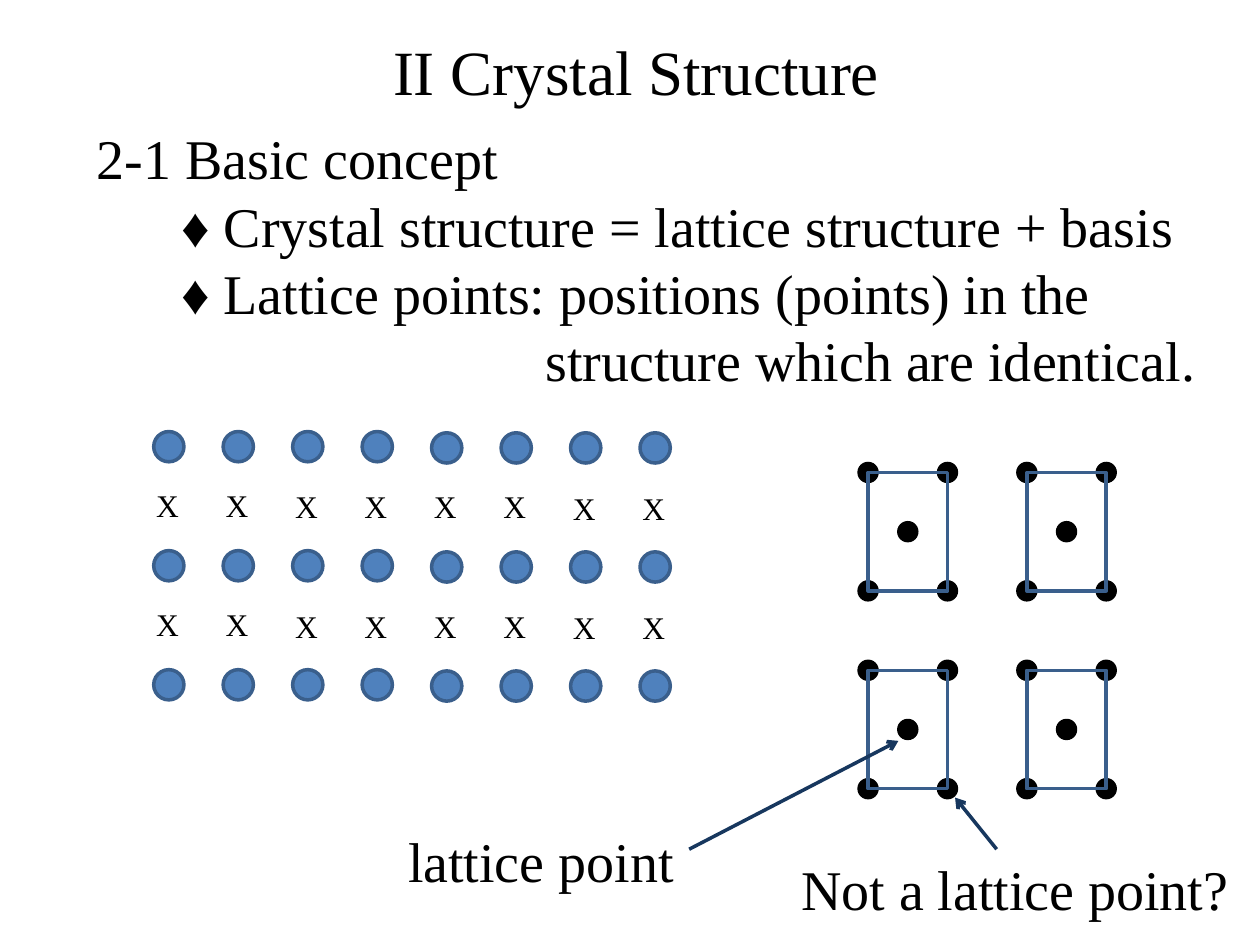
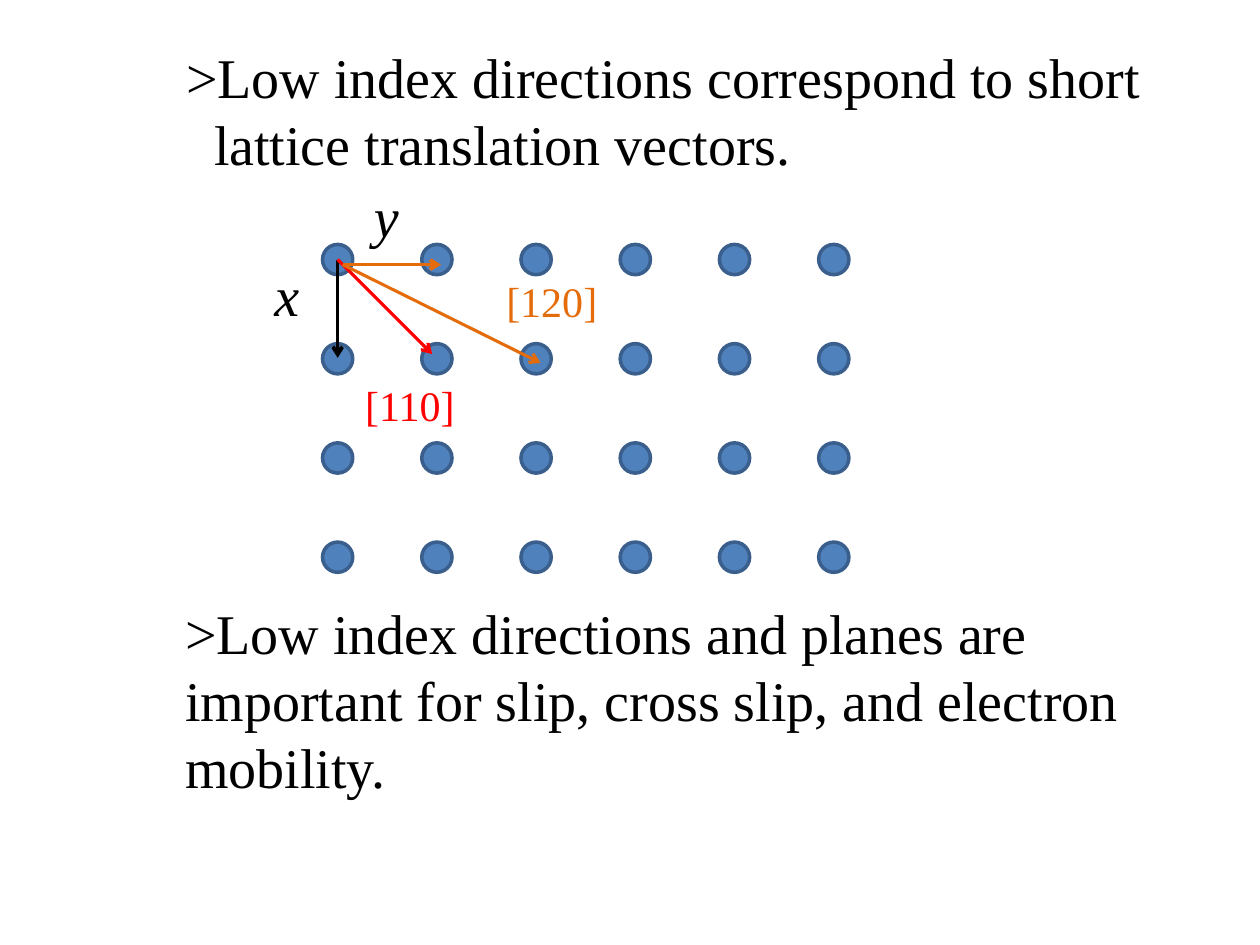
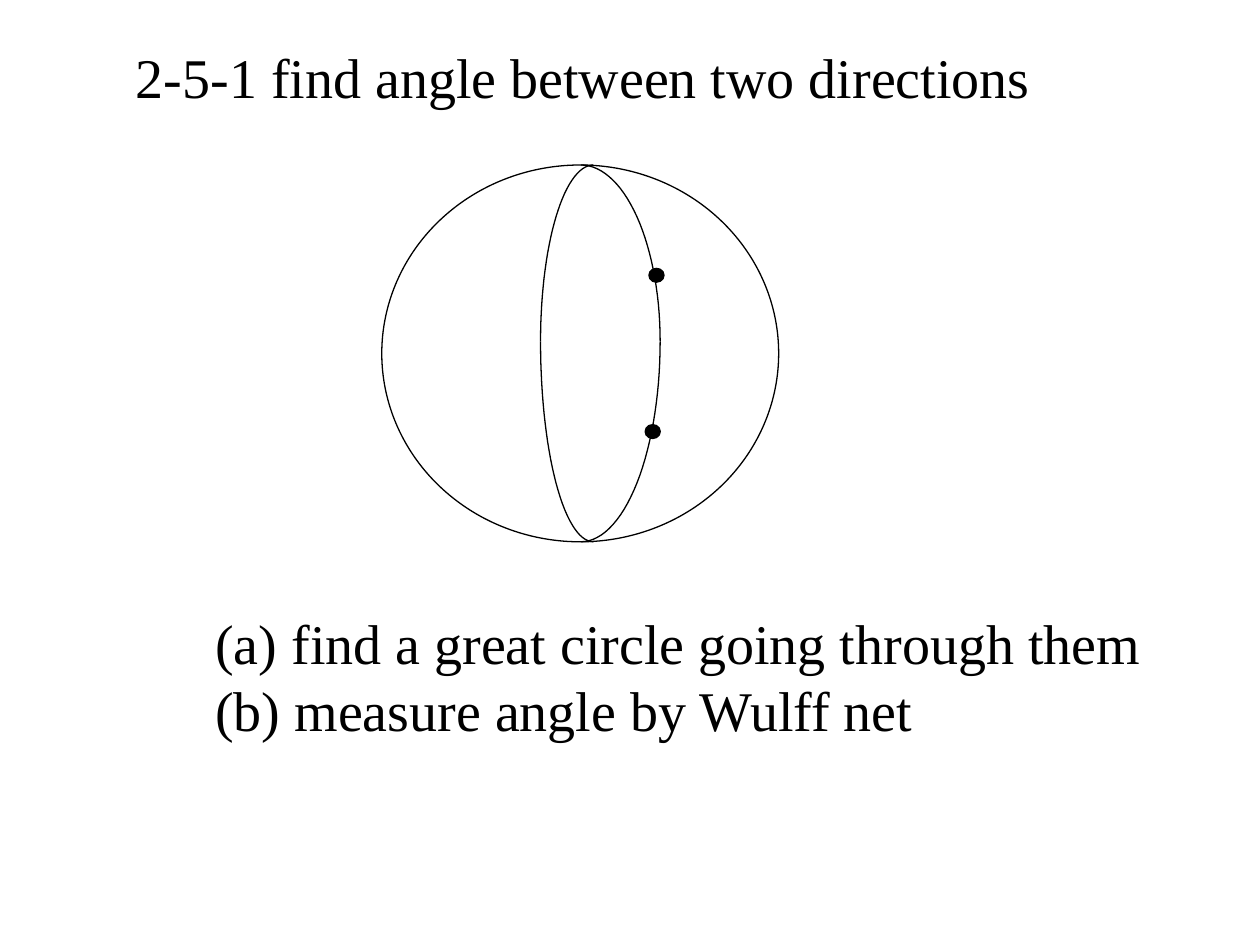
from itertools import product
from math import cos, pi, sin

from lxml.etree import SubElement
from pptx import Presentation
from pptx.dml.color import RGBColor
from pptx.enum.shapes import MSO_CONNECTOR, MSO_SHAPE
from pptx.enum.text import MSO_ANCHOR, MSO_AUTO_SIZE, PP_ALIGN
from pptx.oxml.ns import qn
from pptx.util import Inches, Pt

FONT = "Times New Roman"
COLORS = {
    "black": "000000", "white": "FFFFFF", "atom": "4F81BD", "edge": "3A5F8C",
    "navy": "17375E", "red": "FF0000", "orange": "E46C0A",
}
ATOM, DOT = 0.24, 0.16

# Text boxes: (box, lines, options); a line is a string or (string, indent in inches)
CRYSTAL_TEXTS = [
    ((0.67, 0.92, 9.21, 2.26),
     ["2-1 Basic concept",
      ("♦ Crystal structure = lattice structure + basis", 0.67),
      ("♦ Lattice points: positions (points) in the", 0.67),
      ("structure which are identical.", 3.56)],
     {"wrap": True, "middle": True}),
    ((0.53, 0.21, 9.04, 0.71), ["II Crystal Structure"],
     {"size": 36, "wrap": True, "align": PP_ALIGN.CENTER}),
    ((6.26, 6.73, 3.63, 0.64), ["Not a lattice point?"], {}),
    ((3.14, 6.51, 2.33, 0.64), ["lattice point"], {}),
]
DIRECTION_TEXTS = [
    ((1.37, 4.69, 7.68, 1.72),
     [">Low index directions and planes are",
      "important for slip, cross slip, and electron",
      "mobility."],
     {"middle": True}),
    ((1.38, 0.29, 7.85, 1.18),
     [">Low index directions correspond to short",
      ("lattice translation vectors.", 0.22)], {}),
]
VECTOR_LABELS = [
    ((2.08, 2.02, 0.4, 0.64), ["x"], {"italic": True}),
    ((2.87, 1.39, 0.4, 0.64), ["y"], {"italic": True}),
    ((2.8, 2.96, 0.92, 0.5), ["[110]"], {"size": 24, "color": "red"}),
    ((3.92, 2.14, 0.93, 0.5), ["[120]"], {"size": 24, "color": "orange"}),
]
ANGLE_TEXTS = [
    ((0.98, 0.29, 7.37, 0.64), ["2-5-1 find angle between two directions"], {}),
    ((1.61, 4.78, 7.87, 1.18),
     ["(a) find a great circle going through them",
      "(b) measure angle by Wulff net"], {"wrap": True}),
]

# Arrows: (start, end, colour, width)
POINTERS = [
    ((7.91, 6.74), (7.58, 6.33), "navy", 2),
    ((5.47, 6.74), (7.13, 5.88), "navy", 2),
]
VECTORS = [
    ((2.68, 2.06), (2.68, 2.84), "black", 2),
    ((2.72, 2.1), (3.5, 2.1), "orange", 2),
    ((2.68, 2.06), (3.43, 2.81), "red", 1.75),
    ((2.72, 2.1), (4.29, 2.88), "orange", 1.75),
]

# Unit cells, and the great circle as quarter arcs
CELL_LEFTS, CELL_TOPS, CELL_SIZE = (6.89, 8.15), (3.75, 5.32), (0.63, 0.94)
SPHERE = (3.03, 1.31, 3.15, 2.99)
EQUATOR = 2.71
ARC_SIDES = [(4.61, 0.63), (4.71, -0.42)]
ARC_HEIGHTS = [-1.4, 1.59]
DIRECTION_POINTS = [(5.15, 2.13), (5.12, 3.37)]


def rgb(name):
    return RGBColor.from_string(COLORS[name])


def add_text(slide, box, lines, size=32, color="black", italic=False,
             wrap=False, middle=False, align=PP_ALIGN.LEFT):
    frame = slide.shapes.add_textbox(*map(Inches, box)).text_frame
    frame.word_wrap = wrap
    frame.auto_size = MSO_AUTO_SIZE.SHAPE_TO_FIT_TEXT
    frame.vertical_anchor = MSO_ANCHOR.MIDDLE if middle else MSO_ANCHOR.TOP
    for number, line in enumerate(lines):
        wording, indent = line if isinstance(line, tuple) else (line, 0)
        paragraph = frame.add_paragraph() if number else frame.paragraphs[0]
        paragraph.text = wording
        paragraph.alignment = align
        if indent:
            paragraph._p.get_or_add_pPr().set("marL", str(Inches(indent)))
        font = paragraph.runs[0].font
        font.name, font.size, font.italic = FONT, Pt(size), italic
        font.color.rgb = rgb(color)


def add_texts(slide, texts):
    for box, lines, options in texts:
        add_text(slide, box, lines, **options)


def style(shape, fill, line, width):
    shape.shadow.inherit = False
    if fill:
        shape.fill.solid()
        shape.fill.fore_color.rgb = rgb(fill)
    else:
        shape.fill.background()
    shape.line.color.rgb = rgb(line)
    shape.line.width = Pt(width)


def add_figure(slide, box, fill, line="black", width=0.75, kind=MSO_SHAPE.OVAL):
    style(slide.shapes.add_shape(kind, *map(Inches, box)), fill, line, width)


def add_atom(slide, left, top):
    add_figure(slide, (left, top, ATOM, ATOM), "atom", "edge", 2)


def add_arrow(slide, start, end, color, width):
    arrow = slide.shapes.add_connector(
        MSO_CONNECTOR.STRAIGHT, *map(Inches, start + end))
    arrow.line.color.rgb = rgb(color)
    arrow.line.width = Pt(width)
    SubElement(arrow.line._get_or_add_ln(), qn("a:tailEnd"), type="arrow")
    SubElement(arrow._element.spPr, qn("a:effectLst"))


def add_quarter_arc(slide, center_x, center_y, radius_x, radius_y, steps=30):
    angles = [pi / 2 * step / steps for step in range(steps + 1)]
    points = [(Inches(center_x + radius_x * sin(a)),
               Inches(center_y + radius_y * cos(a))) for a in angles]
    builder = slide.shapes.build_freeform(*points[0])
    builder.add_line_segments(points[1:], close=False)
    style(builder.convert_to_shape(), None, "black", 0.75)


def build_crystal_structure(slide):
    add_texts(slide, CRYSTAL_TEXTS)

    # Lattice of atoms with X sites between the rows
    column_gap, row_gap = 3.86 / 7, 0.945
    for row, column in product(range(3), range(8)):
        drop = 0.01 * (column // 4)
        add_atom(slide, 1.22 + column * column_gap, 3.425 + row * row_gap + drop)
        if row < 2:
            drop = 0.01 * ((column + 2) // 4)
            site = (1.14 + column * column_gap, 3.81 + row * row_gap + drop, 0.38, 0.4)
            add_text(slide, site, ["X"], size=18)

    # Centred unit cells
    width, height = CELL_SIZE
    for left, top in product(CELL_LEFTS, CELL_TOPS):
        for across, down in [(0, 0), (1, 0), (0.5, 0.5), (0, 1), (1, 1)]:
            add_figure(slide, (left + across * width - DOT / 2,
                               top + down * height - DOT / 2, DOT, DOT), "black")
        add_figure(slide, (left, top, width, height), None, "edge", 2,
                   MSO_SHAPE.RECTANGLE)
    for pointer in POINTERS:
        add_arrow(slide, *pointer)


def build_low_index_directions(slide):
    add_texts(slide, DIRECTION_TEXTS)
    gap = 0.7875
    for row, column in product(range(4), range(6)):
        add_atom(slide, 2.56 + column * gap, 1.94 + row * gap)
    for vector in VECTORS:
        add_arrow(slide, *vector)
    add_texts(slide, VECTOR_LABELS)


def build_angle_between_directions(slide):
    add_figure(slide, SPHERE, "white")
    for (center_x, radius_x), radius_y in product(ARC_SIDES, ARC_HEIGHTS):
        add_quarter_arc(slide, center_x, EQUATOR, radius_x, radius_y)
    for left, top in DIRECTION_POINTS:
        add_figure(slide, (left, top, 0.12, 0.11), "black")
    add_texts(slide, ANGLE_TEXTS)


def main():
    deck = Presentation()
    deck.slide_width, deck.slide_height = Inches(10), Inches(7.5)
    for build in (build_crystal_structure, build_low_index_directions,
                  build_angle_between_directions):
        build(deck.slides.add_slide(deck.slide_layouts[6]))
    deck.save("out.pptx")


if __name__ == "__main__":
    main()
